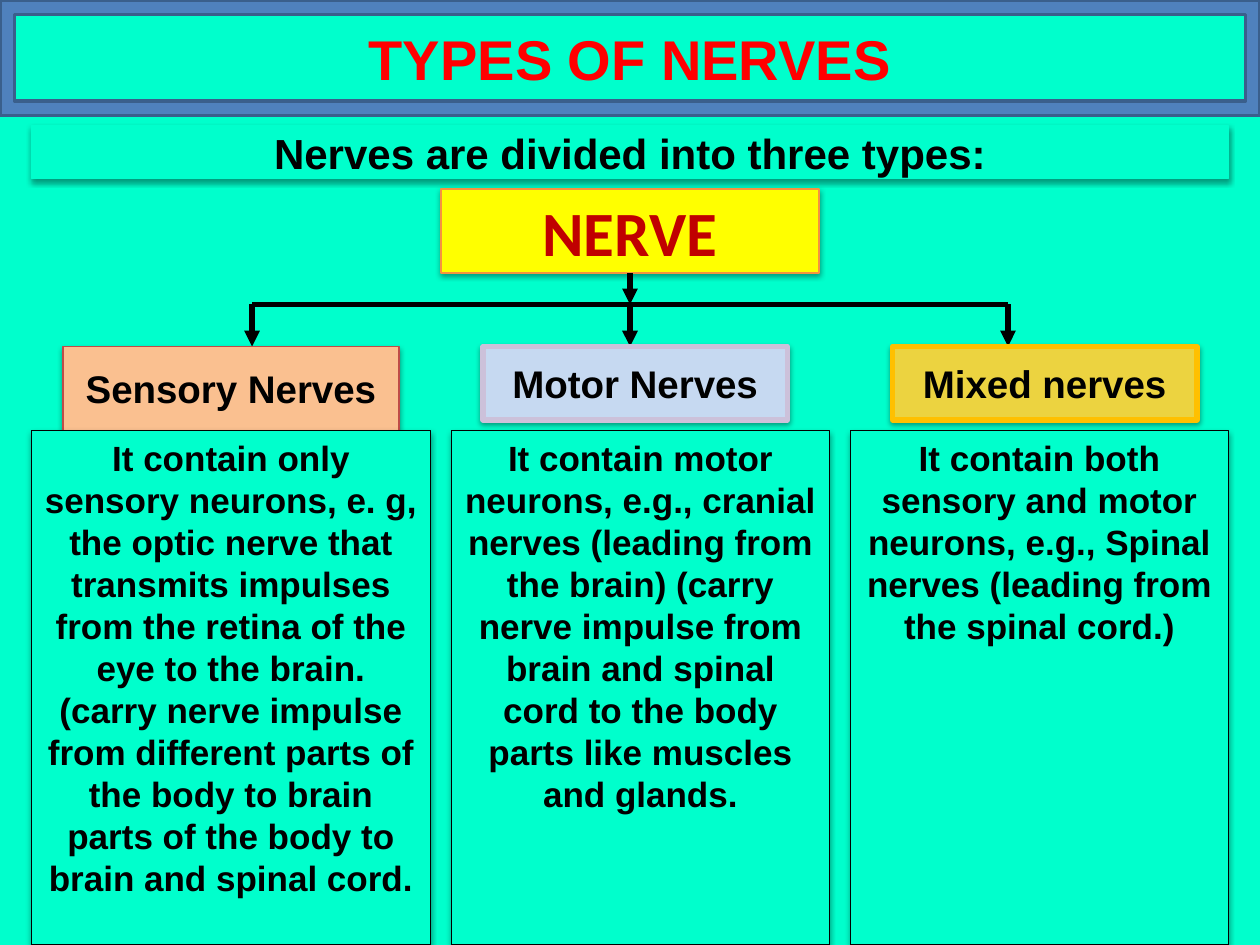
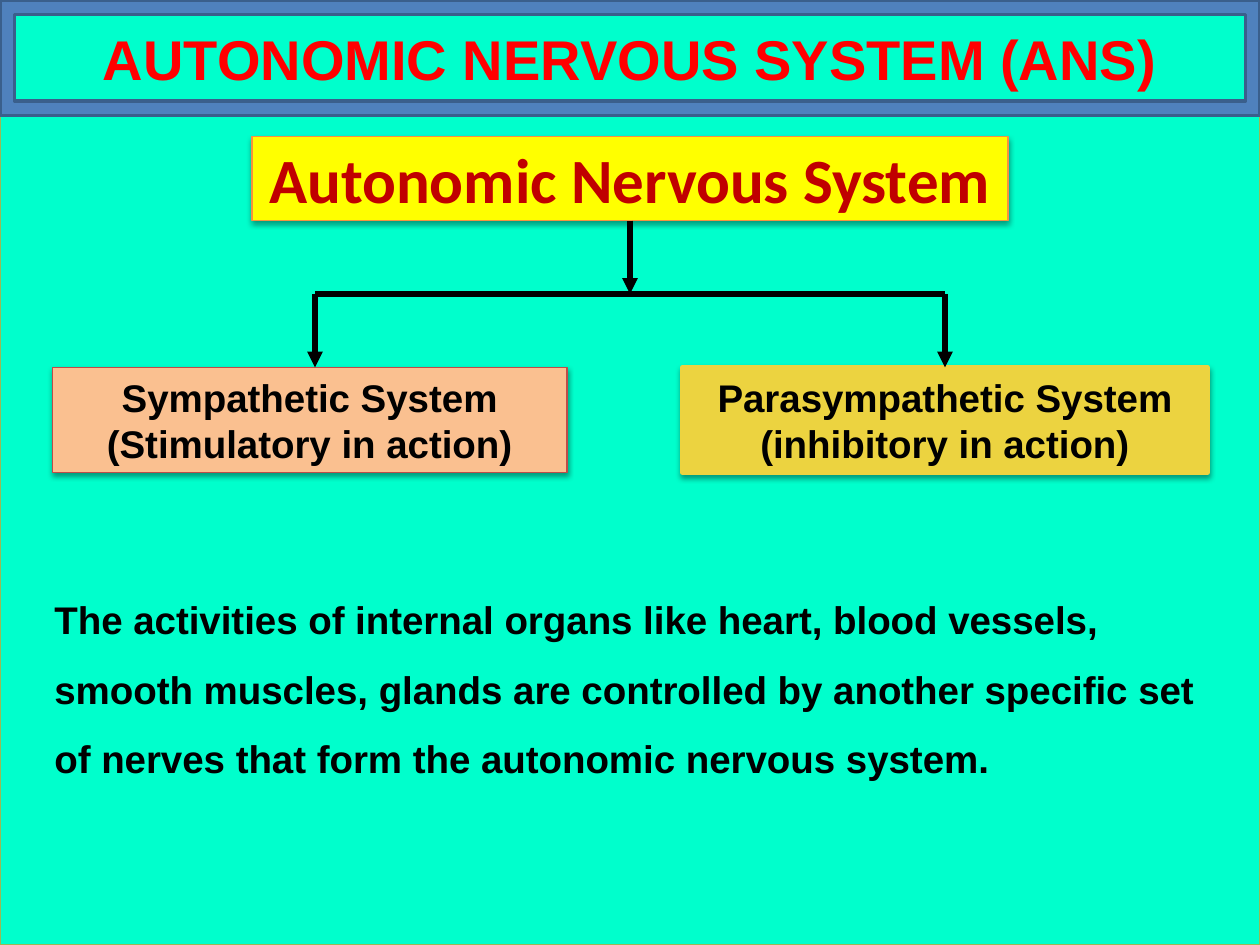
from dataclasses import dataclass

from lxml import etree
from pptx import Presentation
from pptx.dml.color import RGBColor
from pptx.enum.shapes import MSO_CONNECTOR, MSO_SHAPE
from pptx.enum.text import MSO_ANCHOR, PP_ALIGN
from pptx.oxml.ns import qn
from pptx.util import Inches, Pt

RECT, FRAME = MSO_SHAPE.RECTANGLE, MSO_SHAPE.FRAME
STRAIGHT = MSO_CONNECTOR.STRAIGHT
TOP, MIDDLE = MSO_ANCHOR.TOP, MSO_ANCHOR.MIDDLE
LEFT, CENTER = PP_ALIGN.LEFT, PP_ALIGN.CENTER
TOP_SIDE, BOTTOM_SIDE = 0, 2
COLS, ROWS = 120, 90


@dataclass(frozen=True)
class Theme:
    mint: str = "00FFCC"
    olive: str = "98B955"
    blue: str = "4F81BD"
    navy: str = "3A5F8C"
    red: str = "FF0000"
    black: str = "000000"
    yellow: str = "FFFF00"
    orange: str = "F69240"
    crimson: str = "C00000"
    peach: str = "FAC090"
    brick: str = "BF4C48"
    gold: str = "ECD340"
    amber: str = "FFC000"
    sky: str = "C6D9F1"
    lilac: str = "CCC1DA"
    font: str = "Arial"
    root_font: str = "Calibri"
    title_size: int = 32
    root_size: int = 36
    lead_size: int = 24
    label_size: int = 22
    body_size: int = 20
    thin: float = 0.75
    frame_line: float = 2
    thick: float = 3


class Deck:
    def __init__(self, theme):
        self.t = theme
        self.prs = Presentation()
        self.prs.slide_width, self.prs.slide_height = Inches(10), Inches(7.5)
        self.slide = None

    def x(self, col):
        return round(self.prs.slide_width * col / COLS)

    def y(self, row):
        return round(self.prs.slide_height * row / ROWS)

    def area(self, col, row, cols, rows):
        return self.x(col), self.y(row), self.x(cols), self.y(rows)

    def add_slide(self, title, edge):
        self.slide = self.prs.slides.add_slide(self.prs.slide_layouts[6])
        self.box((0, 0, COLS, ROWS), self.t.mint, edge)
        sp = self.box((0, 0, COLS, 11), self.t.blue, self.t.navy,
                      self.t.frame_line, FRAME, shadow=False)
        self.put_text(sp, title, self.t.title_size, self.t.red)

    def box(self, at, fill, line, width=None, kind=RECT, shadow=True):
        sp = self.slide.shapes.add_shape(kind, *self.area(*at))
        sp.fill.solid()
        sp.fill.fore_color.rgb = RGBColor.from_string(fill)
        sp.line.color.rgb = RGBColor.from_string(line)
        sp.line.width = Pt(width or self.t.thin)
        sp.shadow.inherit = False
        if shadow:
            self.cast_shadow(sp)
        return sp

    def cast_shadow(self, sp):
        effects = sp._element.spPr.find(qn("a:effectLst"))
        outer = etree.SubElement(effects, qn("a:outerShdw"), blurRad="40000",
                                 dist="20000", dir="5400000", rotWithShape="0")
        color = etree.SubElement(outer, qn("a:srgbClr"), val=self.t.black)
        etree.SubElement(color, qn("a:alpha"), val="38000")

    def put_text(self, sp, text, size, color=None, font=None, anchor=MIDDLE,
                 align=CENTER, spacing=None):
        tf = sp.text_frame
        tf.text = text
        tf.word_wrap = True
        tf.vertical_anchor = anchor
        for p in tf.paragraphs:
            p.alignment = align
            p.line_spacing = spacing
            for r in p.runs:
                r.font.name = font or self.t.font
                r.font.size = Pt(size)
                r.font.bold = True
                r.font.color.rgb = RGBColor.from_string(color or self.t.black)

    def lead(self, at, text):
        sp = self.box(at, self.t.mint, self.t.mint)
        self.put_text(sp, text, self.t.lead_size)

    def root(self, at, text):
        sp = self.box(at, self.t.yellow, self.t.orange)
        self.put_text(sp, text, self.t.root_size, self.t.crimson,
                      self.t.root_font)
        return sp

    def label(self, at, text, fill, line, width=None):
        sp = self.box(at, fill, line, width)
        self.put_text(sp, text, self.t.label_size)
        return sp

    def panel(self, col, cols, text):
        sp = self.box((col, 41, cols, ROWS - 41), self.t.mint, self.t.black)
        self.put_text(sp, text, self.t.body_size, anchor=TOP)

    def paragraph(self, at, text):
        sp = self.slide.shapes.add_textbox(*self.area(*at))
        self.put_text(sp, text, self.t.label_size, align=LEFT, spacing=1.5)

    def line(self, start, end, arrow=True):
        cx = self.slide.shapes.add_connector(
            STRAIGHT, self.x(start[0]), self.y(start[1]),
            self.x(end[0]), self.y(end[1]))
        cx.line.color.rgb = RGBColor.from_string(self.t.black)
        cx.line.width = Pt(self.t.thick)
        spPr = cx._element.spPr
        if arrow:
            etree.SubElement(spPr.find(qn("a:ln")), qn("a:tailEnd"),
                             type="triangle")
        etree.SubElement(spPr, qn("a:effectLst"))
        return cx

    def branches(self, root, root_row, bar_row, end_row, cols):
        middle = COLS / 2
        stem = self.line((middle, root_row), (middle, bar_row))
        stem.begin_connect(root, BOTTOM_SIDE)
        self.line((cols[0], bar_row), (cols[-1], bar_row), arrow=False)
        return [self.line((col, bar_row), (col, end_row)) for col in cols]


def nerve_types(deck):
    t = deck.t
    deck.add_slide("TYPES OF NERVES", t.mint)
    deck.lead((3, 12, 114, 5), "Nerves are divided into three types:")
    root = deck.root((42, 18, 36, 8), "NERVE")
    deck.panel(43, 36, "It contain motor neurons, e.g., cranial nerves (leading "
               "from the brain) (carry nerve impulse from brain and spinal cord "
               "to the body parts like muscles and glands.")
    deck.panel(81, 36, "It contain both sensory and motor neurons, e.g., Spinal "
               "nerves (leading from the spinal cord.)")
    deck.branches(root, 26, 29, 33, (24, 60, 96))
    deck.label((6, 33, 32, 8), "Sensory Nerves", t.peach, t.brick)
    deck.label((46, 33, 29, 7), "Motor Nerves", t.sky, t.lilac, t.thick)
    deck.label((85, 33, 29, 7), "Mixed nerves", t.gold, t.amber, t.thick)
    deck.panel(3, 38, "It contain only sensory neurons, e. g, the optic nerve "
               "that transmits impulses from the retina of the eye to the brain. "
               "(carry nerve impulse from different parts of the body to brain "
               "parts of the body to brain and spinal cord.")


def autonomic_system(deck):
    t = deck.t
    deck.add_slide("AUTONOMIC NERVOUS SYSTEM (ANS)", t.olive)
    root = deck.root((24, 13, 72, 8), "Autonomic Nervous System")
    deck.label((5, 35, 49, 10), "Sympathetic System\n(Stimulatory in action)",
               t.peach, t.brick)
    right = deck.label((65, 35, 50, 10),
                       "Parasympathetic System\n(inhibitory in action)",
                       t.gold, t.gold, t.thick)
    arrows = deck.branches(root, 21, 28, 35, (30, 90))
    arrows[-1].end_connect(right, TOP_SIDE)
    deck.paragraph((4, 54, 113, 21), "The activities of internal organs like "
                   "heart, blood vessels, smooth muscles, glands are controlled "
                   "by another specific set of nerves that form the autonomic "
                   "nervous system.")


def main():
    deck = Deck(Theme())
    nerve_types(deck)
    autonomic_system(deck)
    deck.prs.save("out.pptx")


if __name__ == "__main__":
    main()
